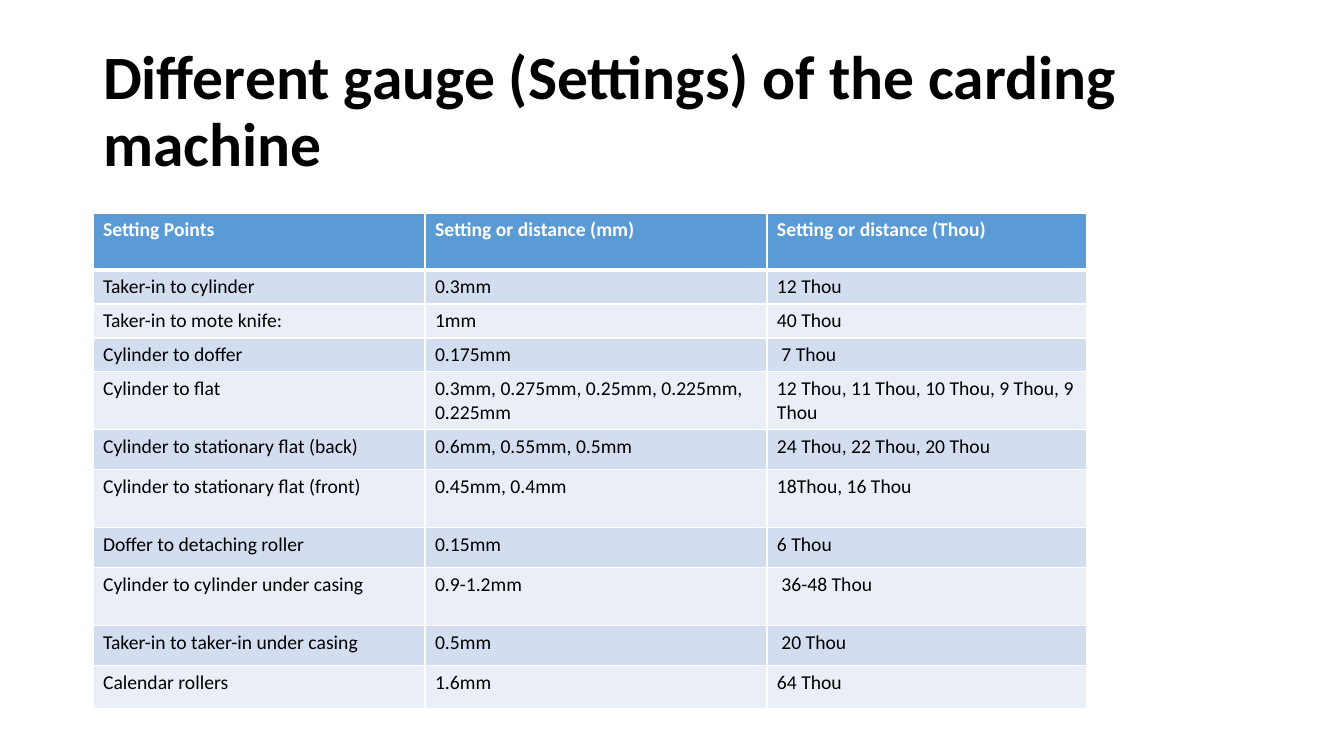
from pptx import Presentation, util as u
from pptx.dml.color import RGBColor
from pptx.enum import text
from pptx.oxml import parse_xml
from pptx.oxml.ns import nsdecls

TITLE = "Different gauge (Settings) of the carding machine"
HEAD = ("Setting Points", "Setting or distance (mm)", "Setting or distance (Thou)")
ROWS = [
    ("Taker-in to cylinder", "0.3mm", "12 Thou"),
    ("Taker-in to mote knife:", "1mm", "40 Thou"),
    ("Cylinder to doffer", "0.175mm", " 7 Thou"),
    ("Cylinder to flat", "0.3mm, 0.275mm, 0.25mm, 0.225mm, 0.225mm",
     "12 Thou, 11 Thou, 10 Thou, 9 Thou, 9 Thou"),
    ("Cylinder to stationary flat (back)", "0.6mm, 0.55mm, 0.5mm",
     "24 Thou, 22 Thou, 20 Thou"),
    ("Cylinder to stationary flat (front)", "0.45mm, 0.4mm", "18Thou, 16 Thou"),
    ("Doffer to detaching roller", "0.15mm", "6 Thou"),
    ("Cylinder to cylinder under casing", "0.9-1.2mm", " 36-48 Thou"),
    ("Taker-in to taker-in under casing", "0.5mm", " 20 Thou"),
    ("Calendar rollers", "1.6mm", "64 Thou"),
]
WIDE = (332, 342, 320)
HIGH = (57, 34, 34, 34, 58, 40, 58, 40, 58, 40, 43)
INK = {"head": "5B9BD5", "odd": "D2DEEF", "even": "EAEFF7",
       "white": "FFFFFF", "black": "000000"}
FONT = "Calibri"


def px(n):
    return u.Emu(round(n * 914400 / 100.8))


def rgb(name):
    return RGBColor.from_string(INK[name])


def write(frame, words, size, ink, bold):
    para = frame.paragraphs[0]
    para.alignment = text.PP_ALIGN.LEFT
    run = para.add_run()
    run.text = words
    font = run.font
    font.name, font.size, font.bold = FONT, u.Pt(size), bold
    font.color.rgb = rgb(ink)
    return para


def edge(cell, side, points):
    cell._tc.get_or_add_tcPr().append(parse_xml(
        f'<a:ln{side} {nsdecls("a")} w="{u.Pt(points)}"><a:solidFill>'
        f'<a:srgbClr val="{INK["white"]}"/></a:solidFill></a:ln{side}>'))


deck = Presentation()
deck.slide_width, deck.slide_height = px(1344), px(756)
slide = deck.slides.add_slide(deck.slide_layouts[5])

title = slide.shapes.title
title.left, title.top, title.width, title.height = map(px, (93, 40, 1159, 146))
frame = title.text_frame
frame.word_wrap = True
frame.auto_size = text.MSO_AUTO_SIZE.NONE
frame.vertical_anchor = text.MSO_ANCHOR.MIDDLE
write(frame, TITLE, 44, "black", True).line_spacing = 0.9

grid = slide.shapes.add_table(len(HIGH), len(WIDE), px(93), px(213),
                              px(sum(WIDE)), px(sum(HIGH))).table
for col, wide in zip(grid.columns, WIDE):
    col.width = px(wide)
for row, high in zip(grid.rows, HIGH):
    row.height = px(high)

for r, words in enumerate([HEAD] + ROWS):
    top = r == 0
    fill = "head" if top else "odd" if r % 2 else "even"
    for c, word in enumerate(words):
        cell = grid.cell(r, c)
        for side, points in (("L", 1), ("R", 1), ("T", 3 if r == 1 else 1),
                             ("B", 3 if top else 1)):
            edge(cell, side, points)
        cell.fill.solid()
        cell.fill.fore_color.rgb = rgb(fill)
        write(cell.text_frame, word, 14, "white" if top else "black", top)

deck.save("out.pptx")
